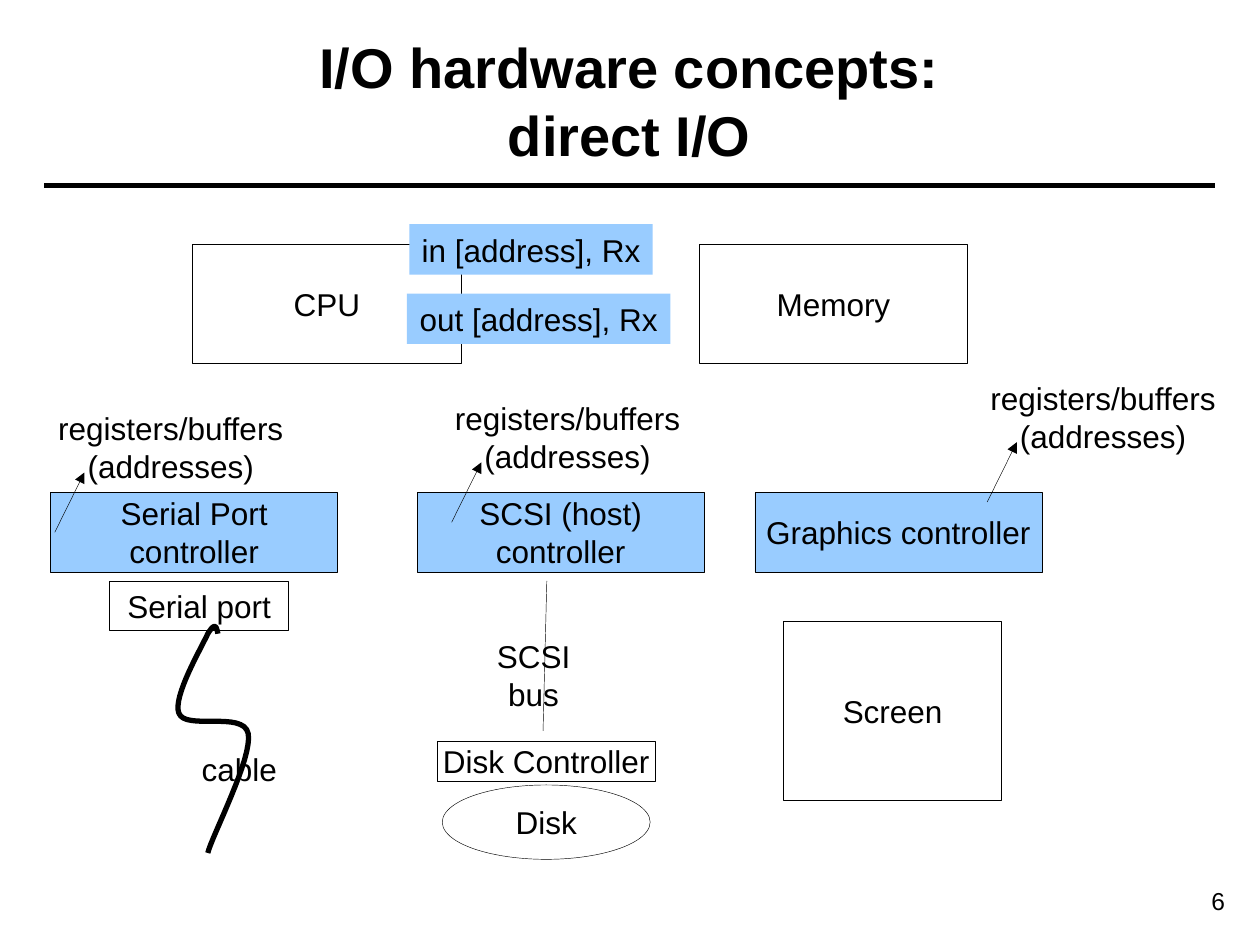
"""Build the slide on direct I/O between the CPU and device controllers."""
import pptx
import pptx.util
import pptx.dml.color
import pptx.enum.shapes
import pptx.enum.text
import pptx.oxml
import pptx.oxml.ns

THEME = {
    "font": "Arial",
    "ink": pptx.dml.color.RGBColor.from_string("000000"),
    "accent": pptx.dml.color.RGBColor.from_string("99CCFF"),
    "title": pptx.util.Pt(32),
    "body": pptx.util.Pt(18),
    "number": pptx.util.Pt(14),
    "thin": pptx.util.Pt(0.25),
    "thick": pptx.util.Pt(3),
}
SHAPES = pptx.enum.shapes.MSO_SHAPE
ALIGN = pptx.enum.text.PP_ALIGN
ANCHOR = pptx.enum.text.MSO_ANCHOR
FIT = pptx.enum.text.MSO_AUTO_SIZE.SHAPE_TO_FIT_TEXT

deck = pptx.Presentation()
deck.slide_width = pptx.util.Inches(10)
deck.slide_height = pptx.util.Inches(7.5)
page = deck.slides.add_slide(deck.slide_layouts[6])
COLUMN = deck.slide_width / 100
ROW = deck.slide_height / 75


def write(box, text, size="body", bold=False, align=ALIGN.CENTER, **frame_format):
    """Fill a box with text, one paragraph per line."""
    frame = box.text_frame
    for name, value in {"word_wrap": False, **frame_format}.items():
        setattr(frame, name, value)
    for index, words in enumerate(text.split("\n")):
        para = frame.add_paragraph() if index else frame.paragraphs[0]
        para.text = words
        para.alignment = align
        for span in para.runs:
            span.font.color.rgb = THEME["ink"]
            for name, value in {"name": THEME["font"], "size": THEME[size], "bold": bold}.items():
                setattr(span.font, name, value)


def connect(left, top, right, bottom, weight="thin", arrow=False):
    """Draw a straight line between two grid points."""
    line = page.shapes.add_connector(
        pptx.enum.shapes.MSO_CONNECTOR.STRAIGHT,
        *(round(value) for value in (left * COLUMN, top * ROW, right * COLUMN, bottom * ROW)))
    line.line.color.rgb = THEME["ink"]
    line.line.width = THEME[weight]
    if arrow:
        head = pptx.oxml.parse_xml(f'<a:tailEnd {pptx.oxml.ns.nsdecls("a")} type="triangle"/>')
        line.line._get_or_add_ln().append(head)
    line._element.spPr.append(pptx.oxml.parse_xml(f'<a:effectLst {pptx.oxml.ns.nsdecls("a")}/>'))


connect(3.5, 14.7, 96.4, 14.7, "thick")

# left, top, width, height, text, format
texts = [
    (87.8, 69.8, 10.4, 3.4, "6", {"size": "number", "align": ALIGN.RIGHT, "word_wrap": True}),
    (3.5, 1.7, 92.9, 12.5, "I/O hardware concepts:\vdirect I/O",
     {"size": "title", "bold": True, "word_wrap": True, "vertical_anchor": ANCHOR.MIDDLE}),
    (36.1, 50.1, 12.5, 4, "SCSI bus", {"auto_size": FIT}),
    (15, 59, 8, 4, "cable", {"auto_size": FIT}),
]

boxes = [(left, 39.1, 22.8, 6.3, text, SHAPES.RECTANGLE, True, True) for left, text in [
    (4, "Serial Port\vcontroller"), (33.1, "SCSI (host)\ncontroller"), (59.9, "Graphics controller")]]
boxes += [(left, 19.4, 21.3, 9.4, text, SHAPES.RECTANGLE, False, True) for left, text in [
    (15.3, "CPU"), (55.5, "Memory")]]
boxes += [
    (8.7, 46.1, 14.2, 3.9, "Serial port", SHAPES.RECTANGLE, False, True),
    (62.2, 49.3, 17.3, 14.2, "Screen", SHAPES.RECTANGLE, False, True),
    (35.1, 62.3, 16.5, 5.9, "Disk", SHAPES.OVAL, False, True),
    (34.7, 58.8, 17.3, 3.2, "Disk Controller", SHAPES.RECTANGLE, False, True),
    (32.5, 17.8, 19.3, 4, "in [address], Rx", SHAPES.RECTANGLE, True, False),
    (32.3, 23.3, 20.9, 4, "out [address], Rx", SHAPES.RECTANGLE, True, False),
]
for left, top, width, height, text, kind, filled, outlined in boxes:
    box = page.shapes.add_shape(
        kind, round(left * COLUMN), round(top * ROW), round(width * COLUMN), round(height * ROW))
    box.shadow.inherit = False
    if filled:
        box.fill.solid()
        box.fill.fore_color.rgb = THEME["accent"]
    else:
        box.fill.background()
    if outlined:
        box.line.color.rgb = THEME["ink"]
        box.line.width = THEME["thin"]
    else:
        box.line.fill.background()
    write(box, text, vertical_anchor=ANCHOR.MIDDLE)

cable_start = (17.3, 50.3)
cable_curves = [
    ((17.2, 49.8), (17.1, 49.3), (16.5, 50.3)),
    ((16, 51.4), (13.7, 55.3), (14.2, 56.6)),
    ((14.7, 58), (19.3, 56.4), (19.7, 58.2)),
    ((20.1, 60.1), (16.8, 66.4), (16.5, 67.7)),
]
STEPS = 16
cable_points = [cable_start]
for curve in cable_curves:
    corners = (cable_points[-1], *curve)
    for step in range(1, STEPS + 1):
        t = step / STEPS
        weights = ((1 - t) ** 3, 3 * t * (1 - t) ** 2, 3 * t ** 2 * (1 - t), t ** 3)
        cable_points.append(tuple(
            sum(weight * corner[axis] for weight, corner in zip(weights, corners)) for axis in (0, 1)))
cable_path = [(round(x * COLUMN), round(y * ROW)) for x, y in cable_points]
builder = page.shapes.build_freeform(*cable_path[0])
builder.add_line_segments(cable_path[1:], close=False)
cable = builder.convert_to_shape()
cable.shadow.inherit = False
cable.fill.background()
cable.line.color.rgb = THEME["ink"]
cable.line.width = THEME["thick"]

connect(43.4, 46.1, 43.1, 58)
for left, top in [(77.6, 29.6), (35.1, 31.2), (3.6, 32)]:
    connect(left + 0.75, top + 10.25, left + 3.1, top + 5.5, arrow=True)
    texts.append((left, top, 19.9, 7, "registers/buffers\v(addresses)", {"auto_size": FIT}))

for left, top, width, height, text, text_format in texts:
    box = page.shapes.add_textbox(
        round(left * COLUMN), round(top * ROW), round(width * COLUMN), round(height * ROW))
    write(box, text, **text_format)

deck.save("out.pptx")
